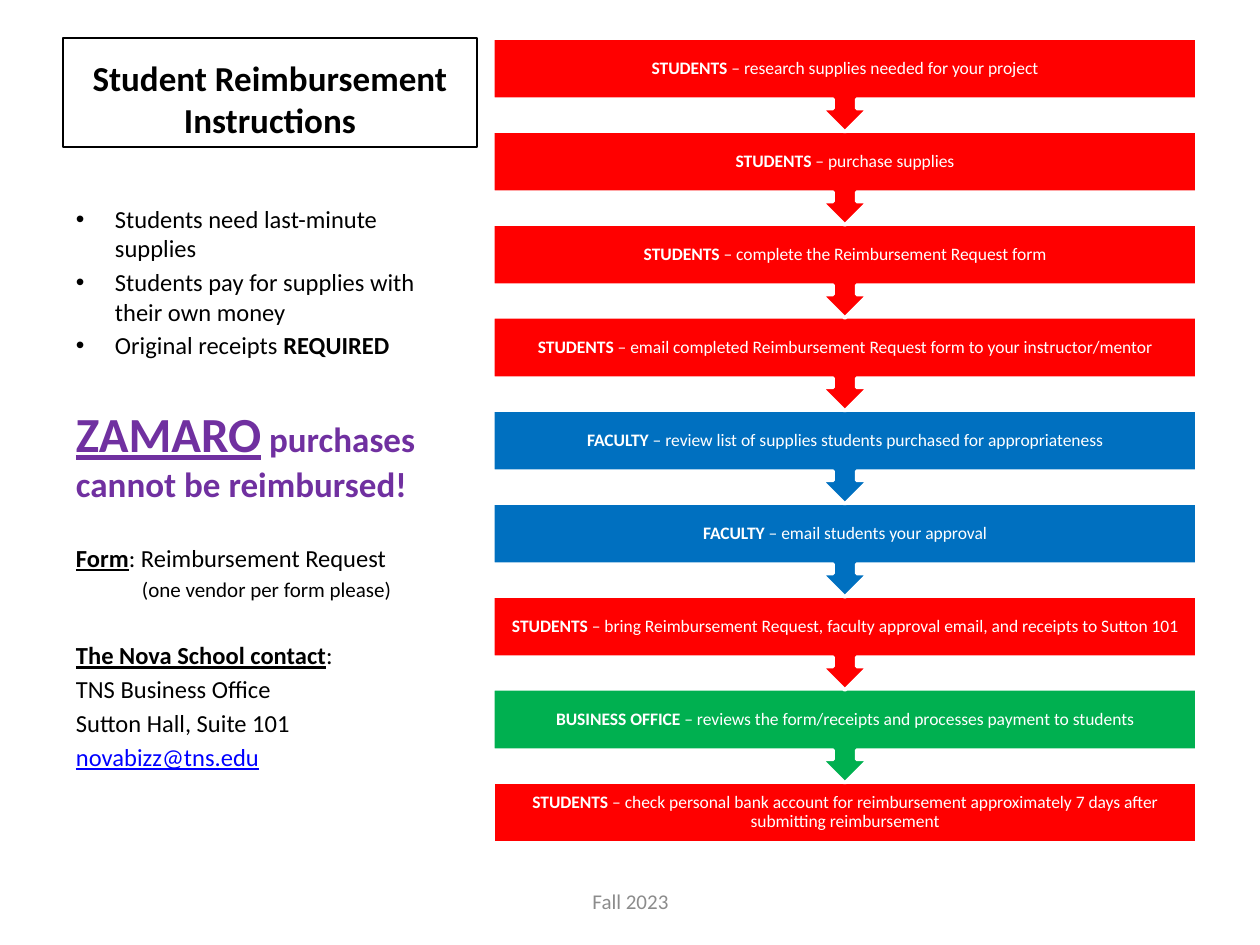
from dataclasses import dataclass

from lxml import etree
from pptx import Presentation
from pptx.dml.color import RGBColor
from pptx.enum.shapes import MSO_SHAPE
from pptx.enum.text import MSO_ANCHOR, PP_ALIGN
from pptx.oxml.ns import qn
from pptx.util import Emu, Pt

RECTANGLE = MSO_SHAPE.RECTANGLE
DOWN_CALLOUT = MSO_SHAPE.DOWN_ARROW_CALLOUT
TOP, MIDDLE, BOTTOM = MSO_ANCHOR.TOP, MSO_ANCHOR.MIDDLE, MSO_ANCHOR.BOTTOM
LEFT, CENTER = PP_ALIGN.LEFT, PP_ALIGN.CENTER
EMU_PER_PX = 914400 / 126


def px(length):
    return Emu(round(length * EMU_PER_PX))


@dataclass(frozen=True)
class Theme:
    font: str = "Calibri"
    black: str = "000000"
    white: str = "FFFFFF"
    students: str = "FF0000"
    faculty: str = "0070C0"
    office: str = "00B050"
    warning: str = "7030A0"
    email: str = "0000FF"
    muted: str = "8C8C8C"
    step_size: int = 10
    small_size: int = 12
    body_size: int = 14
    title_size: int = 20
    warning_size: int = 28


class SlideBuilder:
    def __init__(self, slide, theme):
        self.shapes = slide.shapes
        self.theme = theme

    def frame(self, shape, anchor, inset_x=13, inset_y=6):
        settings = {
            "word_wrap": True,
            "vertical_anchor": anchor,
            "margin_left": px(inset_x),
            "margin_right": px(inset_x),
            "margin_top": px(inset_y),
            "margin_bottom": px(inset_y),
        }
        for name, value in settings.items():
            setattr(shape.text_frame, name, value)
        return shape.text_frame

    def fill_paragraph(self, paragraph, runs, align=LEFT, size=None, color=None, **spacing):
        paragraph.alignment = align
        for name, value in spacing.items():
            setattr(paragraph, name, value)
        for words, style in runs:
            run = paragraph.add_run()
            run.text = words
            look = {"name": self.theme.font, "size": Pt(size or self.theme.body_size)}
            for name, value in (look | style).items():
                setattr(run.font, name, value)
            run.font.color.rgb = RGBColor.from_string(color or self.theme.black)

    def indent(self, paragraph, margin, bullet=False):
        properties = paragraph._p.get_or_add_pPr()
        properties.set("marL", str(px(margin)))
        if bullet:
            properties.set("indent", str(-px(margin)))
            etree.SubElement(properties, qn("a:buFont")).set("typeface", "Arial")
            etree.SubElement(properties, qn("a:buChar")).set("char", "•")

    def box(self, preset, bounds, line, line_width, fill=None):
        shape = self.shapes.add_shape(preset, *map(px, bounds))
        shape.shadow.inherit = False
        if fill:
            shape.fill.solid()
            shape.fill.fore_color.rgb = RGBColor.from_string(fill)
        else:
            shape.fill.background()
        shape.line.color.rgb = RGBColor.from_string(line)
        shape.line.width = Pt(line_width)
        return shape

    def title(self, words, bounds):
        title = self.box(RECTANGLE, bounds, self.theme.black, 1.5)
        paragraph = self.frame(title, BOTTOM).paragraphs[0]
        self.fill_paragraph(paragraph, [(words, {"bold": True})], CENTER,
                            self.theme.title_size)

    def step(self, actor, action, color, bounds, leads_on):
        preset = DOWN_CALLOUT if leads_on else RECTANGLE
        step = self.box(preset, bounds, self.theme.white, 2, color)
        if leads_on:
            for index, share in enumerate((0.25, 0.25, 0.25, 0.65)):
                step.adjustments[index] = share
        paragraph = self.frame(step, MIDDLE, 10, 10).paragraphs[0]
        runs = [(actor, {"bold": True}), (f" – {action}", {})]
        self.fill_paragraph(paragraph, runs, CENTER, self.theme.step_size,
                            self.theme.white, line_spacing=0.9)

    def details(self, entries, bounds):
        frame = self.frame(self.shapes.add_textbox(*map(px, bounds)), TOP)
        for index, (runs, gap, options) in enumerate(entries):
            paragraph = frame.add_paragraph() if index else frame.paragraphs[0]
            look = dict(options)
            margin, bullet = look.pop("margin", 0), look.pop("bullet", False)
            self.fill_paragraph(paragraph, runs, space_before=Pt(gap), **look)
            self.indent(paragraph, margin, bullet)

    def footer(self, words, bounds):
        footer = self.shapes.add_textbox(*map(px, bounds))
        paragraph = self.frame(footer, MIDDLE).paragraphs[0]
        self.fill_paragraph(paragraph, [(words, {})], CENTER,
                            self.theme.small_size, self.theme.muted)


def main():
    theme = Theme()
    deck = Presentation()
    deck.slide_width, deck.slide_height = px(1260), px(945)
    builder = SlideBuilder(deck.slides.add_slide(deck.slide_layouts[6]), theme)

    builder.title("Student Reimbursement Instructions", (63, 38, 414, 109))

    colors = {
        "STUDENTS": theme.students,
        "FACULTY": theme.faculty,
        "BUSINESS OFFICE": theme.office,
    }
    steps = [
        ("STUDENTS", "research supplies needed for your project"),
        ("STUDENTS", "purchase supplies"),
        ("STUDENTS", "complete the Reimbursement Request form"),
        ("STUDENTS", "email completed Reimbursement Request form to your instructor/mentor"),
        ("FACULTY", "review list of supplies students purchased for appropriateness"),
        ("FACULTY", "email students your approval"),
        ("STUDENTS", "bring Reimbursement Request, faculty approval email, and receipts to Sutton 101"),
        ("BUSINESS OFFICE", "reviews the form/receipts and processes payment to students"),
        ("STUDENTS", "check personal bank account for reimbursement approximately 7 days after submitting reimbursement"),
    ]
    last = len(steps) - 1
    for index, (actor, action) in reversed(list(enumerate(steps))):
        leads_on = index < last
        bounds = (493, 38 + 93 * index, 704, 94 if leads_on else 61)
        builder.step(actor, action, colors[actor], bounds, leads_on)

    strong = {"bold": True}
    heading = {"bold": True, "underline": True}
    bullet = {"margin": 39, "bullet": True}
    warning = {"size": theme.title_size, "color": theme.warning}
    line_gap, section_gap = 2.5, 22
    builder.details([
        ([("Students need last-minute supplies", {})], 0, bullet),
        ([("Students pay for supplies with their own money", {})], line_gap, bullet),
        ([("Original receipts ", {}), ("REQUIRED", strong)], line_gap, bullet),
        ([("ZAMARO", heading | {"size": Pt(theme.warning_size)}),
          (" purchases cannot be reimbursed!", strong)], 25, warning),
        ([("Form", heading), (": Reimbursement Request", {})], section_gap, {}),
        ([("(one vendor per form please)", {})], line_gap,
         {"margin": 66, "size": theme.small_size}),
        ([("The Nova School contact", heading), (":", {})], section_gap, {}),
        ([("TNS Business Office", {})], line_gap, {}),
        ([("Sutton Hall, Suite 101", {})], line_gap, {}),
        ([("novabizz@tns.edu", {"underline": True})], line_gap, {"color": theme.email}),
    ], (63, 198, 414, 646))

    builder.footer("Fall 2023", (431, 876, 399, 50))
    deck.save("out.pptx")


if __name__ == "__main__":
    main()
